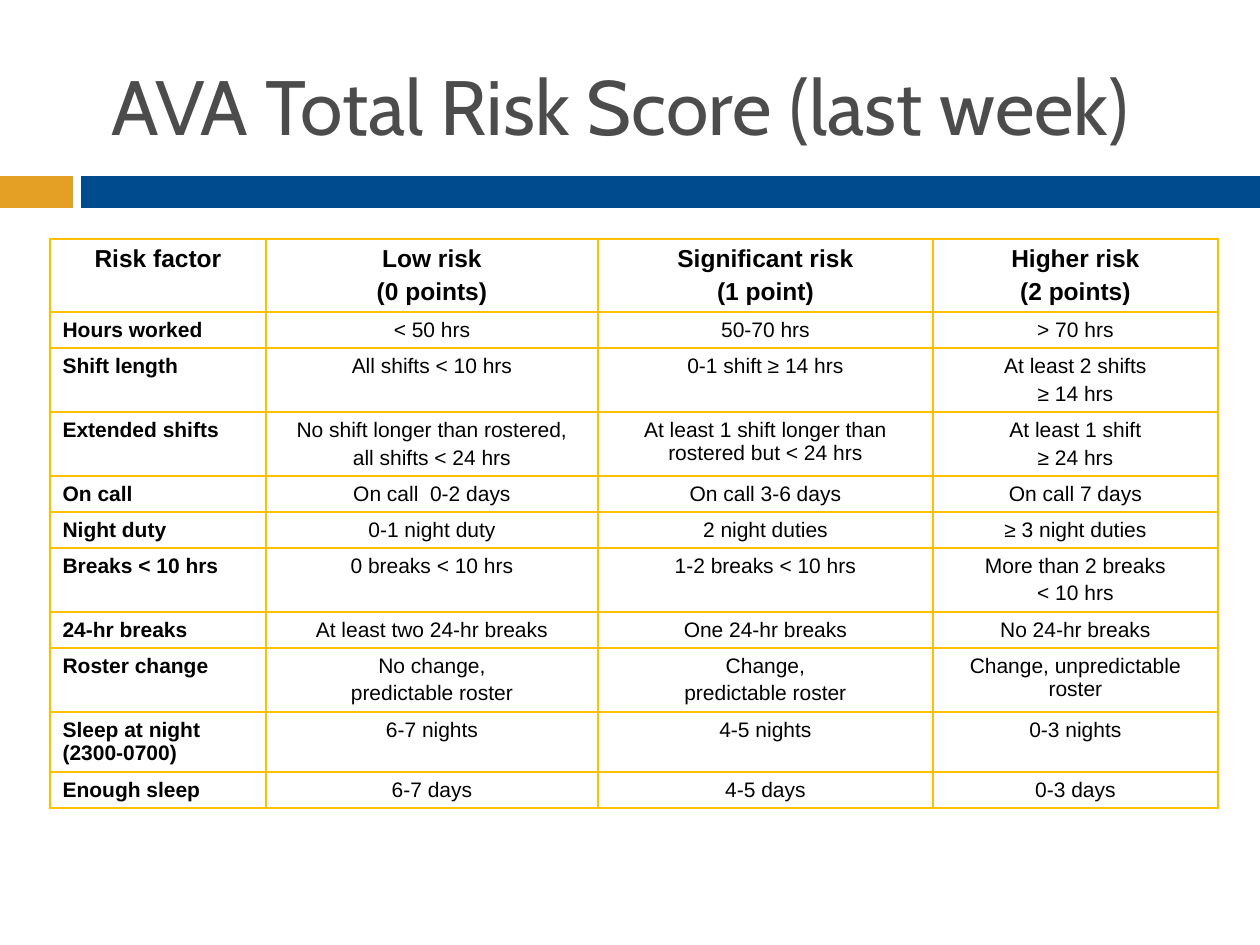
from lxml import etree
from pptx import Presentation
from pptx.dml.color import RGBColor
from pptx.enum.shapes import MSO_SHAPE
from pptx.enum.text import MSO_ANCHOR, PP_ALIGN
from pptx.oxml.ns import qn
from pptx.util import Pt

RECTANGLE = MSO_SHAPE.RECTANGLE
LEFT, CENTER = PP_ALIGN.LEFT, PP_ALIGN.CENTER
MIDDLE = MSO_ANCHOR.MIDDLE

PX = 914400 // 126  # EMU in one px
BLACK = RGBColor(0x00, 0x00, 0x00)
GRAY = RGBColor(0x4C, 0x4C, 0x4C)
ORANGE = RGBColor(0xE4, 0xA0, 0x24)
BLUE = RGBColor(0x00, 0x4B, 0x8D)
GOLD = RGBColor(0xFF, 0xC0, 0x00)

COLUMN_WIDTHS = [216, 332, 335, 285]
ROW_HEIGHTS = [73, 36, 64, 64, 36, 36, 64, 36, 64, 60, 36]
# A line break within a cell starts a new paragraph
RISK_ROWS = [
    ["Risk factor", "Low risk\n(0 points)", "Significant risk\n(1 point)",
     "Higher risk\n(2 points)"],
    ["Hours worked", "< 50 hrs", "50-70 hrs", "> 70 hrs"],
    ["Shift length", "All shifts < 10 hrs", "0-1 shift ≥ 14 hrs",
     "At least 2 shifts\n≥ 14 hrs"],
    ["Extended shifts", "No shift longer than rostered,\nall shifts < 24 hrs",
     "At least 1 shift longer than rostered but < 24 hrs",
     "At least 1 shift\n≥ 24 hrs"],
    ["On call", "On call  0-2 days", "On call 3-6 days", "On call 7 days"],
    ["Night duty", "0-1 night duty", "2 night duties", "≥ 3 night duties"],
    ["Breaks < 10 hrs", "0 breaks < 10 hrs", "1-2 breaks < 10 hrs",
     "More than 2 breaks\n< 10 hrs"],
    ["24-hr breaks", "At least two 24-hr breaks", "One 24-hr breaks",
     "No 24-hr breaks"],
    ["Roster change", "No change,\npredictable roster",
     "Change,\npredictable roster", "Change, unpredictable roster"],
    ["Sleep at night (2300-0700)", "6-7 nights", "4-5 nights", "0-3 nights"],
    ["Enough sleep", "6-7 days", "4-5 days", "0-3 days"],
]


def px(*lengths):
    return [length * PX for length in lengths]


def write_text(text_frame, text, *, font="Arial", size=12, color=BLACK,
               bold=False, align=LEFT):
    text_frame.word_wrap = True
    for index, line in enumerate(text.split("\n")):
        paragraph = text_frame.paragraphs[0]
        if index:
            paragraph = text_frame.add_paragraph()
            paragraph.space_before = Pt(size * 0.2)
        paragraph.alignment = align
        run = paragraph.add_run()
        run.text = line
        run.font.name = font
        run.font.size = Pt(size)
        run.font.bold = bold
        run.font.color.rgb = color


def add_title(slide, text):
    title = slide.shapes.add_textbox(*px(99, 26, 1071, 158))
    title.text_frame.vertical_anchor = MIDDLE
    write_text(title.text_frame, text, font="Cabin", size=44, color=GRAY)


def add_bar(slide, left, width, color):
    bar = slide.shapes.add_shape(RECTANGLE, *px(left, 176, width, 32))
    bar.shadow.inherit = False
    bar.fill.solid()
    bar.fill.fore_color.rgb = color
    bar.line.fill.background()


def set_borders(cell, color, width):
    properties = cell._tc.get_or_add_tcPr()
    for position, side in enumerate(("a:lnL", "a:lnR", "a:lnT", "a:lnB")):
        line = etree.Element(qn(side), w=str(Pt(width)))
        fill = etree.SubElement(line, qn("a:solidFill"))
        etree.SubElement(fill, qn("a:srgbClr"), val=str(color))
        properties.insert(position, line)


def add_risk_table(slide, rows):
    frame = slide.shapes.add_table(
        len(rows), len(COLUMN_WIDTHS),
        *px(50, 239, sum(COLUMN_WIDTHS), sum(ROW_HEIGHTS)))
    table = frame.table
    table.first_row = False
    table.horz_banding = False
    for column, width in zip(table.columns, COLUMN_WIDTHS):
        column.width = width * PX
    for row, height in zip(table.rows, ROW_HEIGHTS):
        row.height = height * PX
    for row_index, texts in enumerate(rows):
        is_header = row_index == 0
        for column_index, text in enumerate(texts):
            is_label = column_index == 0
            cell = table.cell(row_index, column_index)
            cell.margin_bottom = 2 * PX  # keeps rows at their set heights
            cell.fill.background()
            set_borders(cell, GOLD, 1.5)
            write_text(cell.text_frame, text, size=14 if is_header else 12,
                       bold=is_header or is_label,
                       align=LEFT if is_label and not is_header else CENTER)


def main():
    presentation = Presentation()
    presentation.slide_width, presentation.slide_height = px(1260, 945)
    slide = presentation.slides.add_slide(presentation.slide_layouts[6])

    # Divider under the title
    add_bar(slide, 0, 73, ORANGE)
    add_bar(slide, 81, 1179, BLUE)

    # Title and score table
    add_title(slide, "AVA Total Risk Score (last week)")
    add_risk_table(slide, RISK_ROWS)

    presentation.save("out.pptx")


if __name__ == "__main__":
    main()
